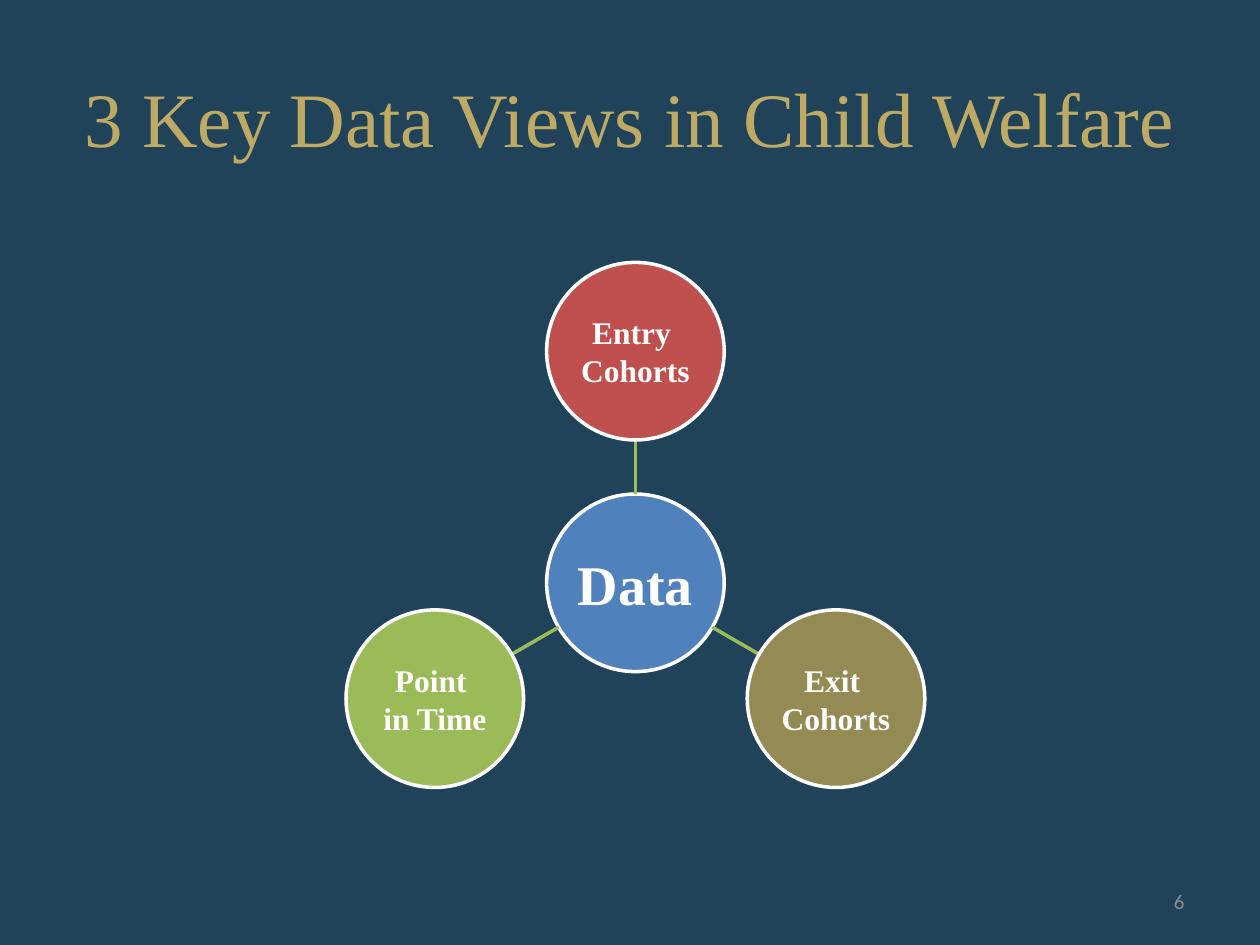
from math import cos, radians, sin

from lxml import etree
from pptx import Presentation
from pptx.dml.color import RGBColor
from pptx.enum.shapes import MSO_CONNECTOR as CONN, MSO_SHAPE as SHAPE
from pptx.enum.text import MSO_ANCHOR as ANCHOR, PP_ALIGN as ALIGN
from pptx.oxml.ns import qn
from pptx.util import Cm, Pt

NAVY = RGBColor(0x20, 0x43, 0x59)
GOLD = RGBColor(0xBE, 0xAA, 0x64)
WHITE = RGBColor(0xFF, 0xFF, 0xFF)
GRAY = RGBColor(0x8C, 0x8C, 0x8C)
BLUE = RGBColor(0x4F, 0x81, 0xBD)
RED = RGBColor(0xC0, 0x50, 0x4D)
TAN = RGBColor(0x94, 0x8A, 0x54)
GREEN = RGBColor(0x9B, 0xBB, 0x59)

SERIF = "Times New Roman"
HUB_X, HUB_Y = 12.81, 11.75
RADIUS = 1.79
ORBIT = 4.67
VIEWS = [
    (["Entry ", "Cohorts"], RED),
    (["Exit ", "Cohorts"], TAN),
    (["Point ", "in Time"], GREEN),
]


def write(tf, lines, size, color, font=SERIF, align=ALIGN.CENTER, bold=False):
    tf.word_wrap = True
    tf.vertical_anchor = ANCHOR.MIDDLE
    for i, line in enumerate(lines):
        p = tf.add_paragraph() if i else tf.paragraphs[0]
        p.text = line
        p.alignment = align
        p.font.name = font
        p.font.size = Pt(size)
        p.font.bold = bold
        p.font.color.rgb = color


def add_label(slide, x, y, w, h, text, size, color, **style):
    sp = slide.shapes.add_textbox(Cm(x), Cm(y), Cm(w), Cm(h))
    write(sp.text_frame, [text], size, color, **style)


def add_circle(slide, x, y, lines, size, fill):
    sp = slide.shapes.add_shape(
        SHAPE.OVAL, Cm(x - RADIUS), Cm(y - RADIUS), Cm(2 * RADIUS), Cm(2 * RADIUS))
    sp.shadow.inherit = False
    sp.fill.solid()
    sp.fill.fore_color.rgb = fill
    sp.line.color.rgb = WHITE
    sp.line.width = Pt(2)
    tf = sp.text_frame
    tf.margin_left = tf.margin_right = tf.margin_top = tf.margin_bottom = Cm(0.04)
    write(tf, lines, size, WHITE, bold=True)


def polar(angle, distance):
    return HUB_X + distance * cos(angle), HUB_Y + distance * sin(angle)


def add_spoke(slide, angle):
    x1, y1 = polar(angle, RADIUS)
    x2, y2 = polar(angle, ORBIT - RADIUS)
    line = slide.shapes.add_connector(
        CONN.STRAIGHT, Cm(x1), Cm(y1), Cm(x2), Cm(y2))
    line.line.color.rgb = GREEN
    line.line.width = Pt(2)
    etree.SubElement(line._element.spPr, qn("a:effectLst"))


def main():
    prs = Presentation()
    prs.slide_width, prs.slide_height = Cm(25.4), Cm(19.05)
    s = prs.slides.add_slide(prs.slide_layouts[6])
    s.background.fill.solid()
    s.background.fill.fore_color.rgb = NAVY

    add_label(s, 1.27, 0.76, 22.86, 3.18,
              "3 Key Data Views in Child Welfare", 44, GOLD)
    add_circle(s, HUB_X, HUB_Y, ["Data"], 32, BLUE)
    for i, (lines, fill) in enumerate(VIEWS):
        angle = radians(-90 + i * 360 / len(VIEWS))
        add_spoke(s, angle)
        add_circle(s, *polar(angle, ORBIT), lines, 18, fill)
    add_label(s, 18.2, 17.66, 5.93, 1.01, "6", 12, GRAY,
              font="Calibri", align=ALIGN.RIGHT)
    prs.save("out.pptx")


if __name__ == "__main__":
    main()
